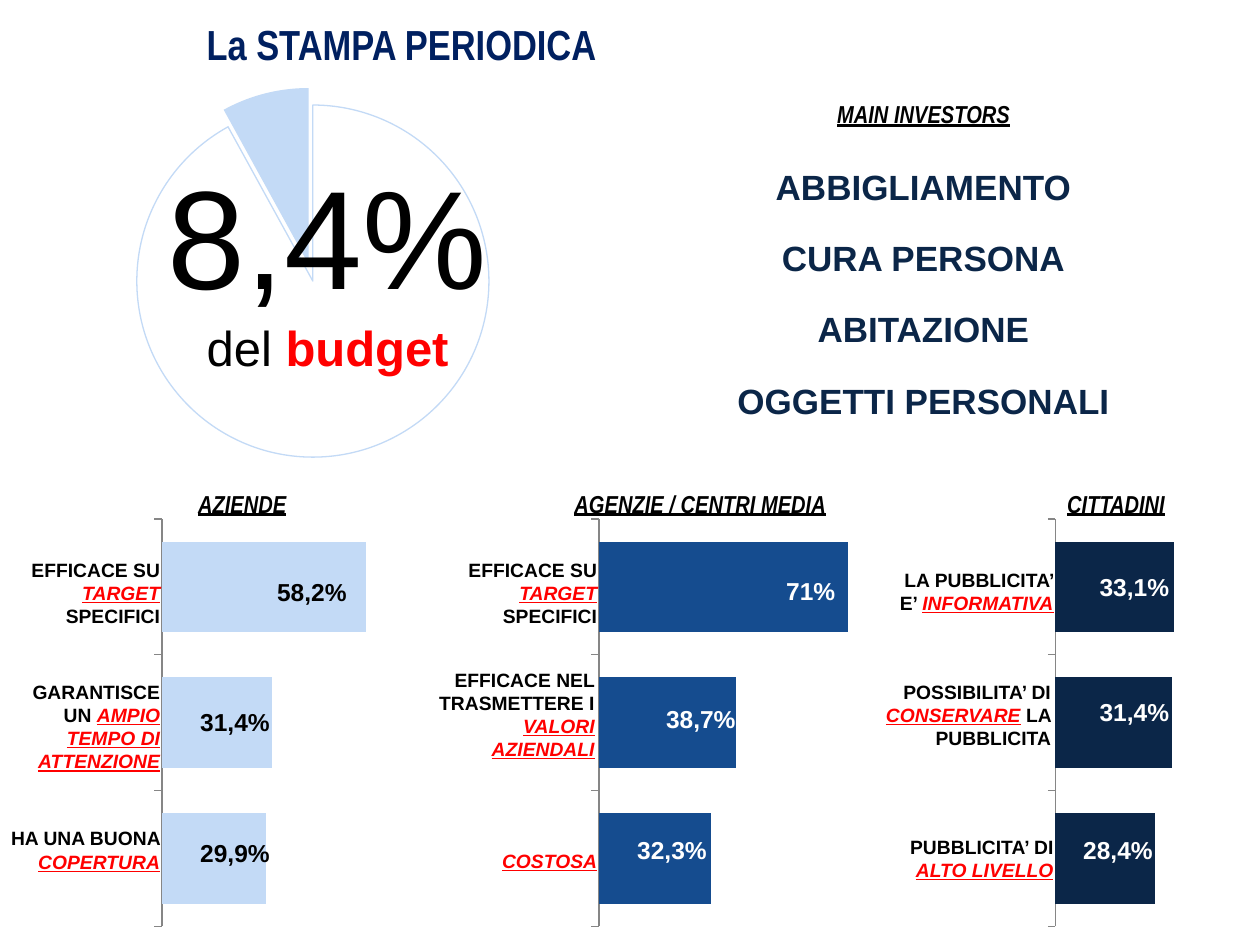
from lxml import etree
from pptx import Presentation
from pptx import util as u
from pptx.chart.data import CategoryChartData
from pptx.dml.color import RGBColor
from pptx.enum import chart as ch, text
from pptx.oxml import ns

BLACK = RGBColor(0x00, 0x00, 0x00)
WHITE = RGBColor(0xFF, 0xFF, 0xFF)
RED = RGBColor(0xFF, 0x00, 0x00)
GREY = RGBColor(0x86, 0x86, 0x86)
TITLE_BLUE = RGBColor(0x00, 0x20, 0x60)
PALE = RGBColor(0xC3, 0xDA, 0xF6)
BLUE = RGBColor(0x15, 0x4C, 0x8F)
NAVY = RGBColor(0x0B, 0x26, 0x48)

LEFT, CENTER, RIGHT = (text.PP_ALIGN.LEFT, text.PP_ALIGN.CENTER,
                       text.PP_ALIGN.RIGHT)


class Board:
    sans = "Arial"
    narrow = "Arial Narrow"

    def __init__(self, slide):
        self.slide = slide

    def place(self, shape, left, top, width, height):
        shape.left, shape.top = u.Cm(left), u.Cm(top)
        shape.width, shape.height = u.Cm(width), u.Cm(height)

    def run(self, paragraph, words, size, color, bold=True, accent=False,
            face=None):
        """Add a run; an accent is italic and underlined."""
        font = paragraph.add_run().font
        paragraph.runs[-1].text = words
        font.name, font.size, font.bold = face or self.sans, u.Pt(size), bold
        font.color.rgb = color
        if accent:
            font.italic = font.underline = True

    def box(self, left, top, width, height, align):
        """Add an empty text box and return its text frame."""
        frame = self.slide.shapes.add_textbox(
            u.Cm(left), u.Cm(top), u.Cm(width), u.Cm(height)).text_frame
        frame.word_wrap = True
        frame.auto_size = text.MSO_AUTO_SIZE.SHAPE_TO_FIT_TEXT
        frame.paragraphs[0].alignment = align
        return frame

    def title(self, words, *place):
        title = self.slide.shapes.title
        self.place(title, *place)
        frame = title.text_frame
        frame.vertical_anchor = text.MSO_ANCHOR.TOP
        frame.auto_size = text.MSO_AUTO_SIZE.NONE
        frame.paragraphs[0].alignment = LEFT
        self.run(frame.paragraphs[0], words, 24, TITLE_BLUE, face=self.narrow)

    def plain_list(self, items, *place):
        body = self.slide.placeholders[1]
        self.place(body, *place)
        frame = body.text_frame
        frame.auto_size = text.MSO_AUTO_SIZE.NONE
        for i, item in enumerate(items):
            paragraph = frame.add_paragraph() if i else frame.paragraphs[0]
            props = paragraph._p.get_or_add_pPr()
            props.set("marL", "0")
            props.set("indent", "0")
            etree.SubElement(props, ns.qn("a:buNone"))
            paragraph.alignment = CENTER
            paragraph.space_before = u.Pt(16.8 if i else 0)
            self.run(paragraph, item, 20, NAVY)

    def heading(self, words, left, top, width):
        frame = self.box(left, top, width, 0.86, CENTER)
        self.run(frame.paragraphs[0], words, 14, BLACK, accent=True,
                 face=self.narrow)

    def label(self, parts, right, top, width, height):
        """Write parts that are by turns plain and accented."""
        frame = self.box(right - width, top, width, height, RIGHT)
        for i, part in enumerate(parts):
            if part:
                accent = i % 2 == 1
                self.run(frame.paragraphs[0], part, 11,
                         RED if accent else BLACK, accent=accent)

    def value(self, words, left, top, color):
        frame = self.box(left, top, 2.13, 0.86, RIGHT)
        self.run(frame.paragraphs[0], words, 14, color)

    def chart(self, kind, values, place, area):
        """Add a one-series chart whose plot fills area (x, y, w, h shares)."""
        data = CategoryChartData()
        data.categories = [str(i + 1) for i in range(len(values))]
        data.add_series("Series 1", values)
        chart = self.slide.shapes.add_chart(
            kind, *(u.Cm(n) for n in place), data).chart
        chart.has_legend = chart.has_title = False
        chart.font.name, chart.font.size = self.sans, u.Pt(18)
        plot_area = chart._chartSpace.chart.plotArea
        for old in plot_area.findall(ns.qn("c:layout")):
            plot_area.remove(old)
        layout = etree.Element(ns.qn("c:layout"))
        manual = etree.SubElement(layout, ns.qn("c:manualLayout"))
        settings = [("layoutTarget", "inner"), ("xMode", "edge"),
                    ("yMode", "edge"), *zip("xywh", area)]
        for tag, setting in settings:
            etree.SubElement(manual, ns.qn("c:" + tag)).set("val", str(setting))
        plot_area.insert(0, layout)
        return chart

    def pie(self, values, place, area):
        chart = self.chart(ch.XL_CHART_TYPE.PIE, values, place, area)
        rest, share = (chart.plots[0].series[0].points[i] for i in range(2))
        rest.format.fill.background()
        rest.format.line.color.rgb = PALE
        rest.format.line.width = u.Pt(0.75)
        share.format.fill.solid()
        share.format.fill.fore_color.rgb = PALE
        point = rest._element.find(ns.qn("c:dPt"))
        explosion = etree.Element(ns.qn("c:explosion"))
        explosion.set("val", "10")
        point.find(ns.qn("c:spPr")).addprevious(explosion)

    def bars(self, values, left, maximum, color):
        chart = self.chart(ch.XL_CHART_TYPE.BAR_CLUSTERED, values,
                           (left, 10.29, 7.39, 8.56),
                           (0.02, 0.02, 0.96, 0.96))
        plot = chart.plots[0]
        plot.gap_width, plot.vary_by_categories = 50, False
        fill = plot.series[0].format.fill
        fill.solid()
        fill.fore_color.rgb = color
        for axis in (chart.category_axis, chart.value_axis):
            axis.has_major_gridlines = False
            axis.tick_label_position = ch.XL_TICK_LABEL_POSITION.NONE
            axis.major_tick_mark = ch.XL_TICK_MARK.OUTSIDE
        chart.category_axis.reverse_order = True
        chart.category_axis.format.line.color.rgb = GREY
        chart.value_axis.minimum_scale = 0
        chart.value_axis.maximum_scale = maximum
        chart.value_axis.format.line.fill.background()


# Each group: heading (words, left, width), chart (values, left, maximum),
# bar and value colours, then rows of
# (label parts, (right, top, width, height), value, (left, top)).
GROUPS = [
    (("AZIENDE", 1.09, 7.59), ([100, 54, 51], 3.1, 172), PALE, BLACK, [
        (("EFFICACE SU ", "TARGET", " SPECIFICI"),
         (3.48, 11.13, 3.3, 1.7), "58,2%", (5.11, 11.51)),
        (("GARANTISCE UN ", "AMPIO TEMPO DI ATTENZIONE"),
         (3.48, 13.59, 3.3, 2.18), "31,4%", (3.56, 14.12)),
        (("HA UNA BUONA ", "COPERTURA"),
         (3.48, 16.54, 3.71, 1.22), "29,9%", (3.56, 16.76))]),
    (("AGENZIE / CENTRI MEDIA", 9.32, 9.6), ([100, 55, 45], 11.91, 141),
     BLUE, WHITE, [
        (("EFFICACE SU ", "TARGET", " SPECIFICI"),
         (12.29, 11.13, 3.94, 1.7), "71%", (14.96, 11.48)),
        (("EFFICACE NEL TRASMETTERE I ", "VALORI AZIENDALI"),
         (12.24, 13.34, 3.94, 2.18), "38,7%", (12.95, 14.07)),
        (("", "COSTOSA"),
         (12.29, 16.99, 3.53, 0.74), "32,3%", (12.37, 16.71))]),
    (("CITTADINI", 17.7, 9.6), ([100, 98, 84], 21.11, 295), NAVY, WHITE, [
        (("LA PUBBLICITA’ E’ ", "INFORMATIVA"),
         (21.49, 11.33, 3.94, 1.22), "33,1%", (21.69, 11.4)),
        (("POSSIBILITA’ DI ", "CONSERVARE", " LA PUBBLICITA"),
         (21.44, 13.59, 3.94, 1.7), "31,4%", (21.69, 13.92)),
        (("PUBBLICITA’ DI ", "ALTO LIVELLO"),
         (21.49, 16.71, 3.53, 1.22), "28,4%", (21.36, 16.71))]),
]


def main():
    deck = Presentation()
    deck.slide_width, deck.slide_height = u.Cm(25.4), u.Cm(19.05)
    board = Board(deck.slides.add_slide(deck.slide_layouts[1]))

    board.title("La STAMPA PERIODICA", 3.91, 0.25, 18.24, 1.27)
    board.pie([92, 8], (0.1, 1.12, 12.24, 8.41), (0.21, 0.07, 0.58, 0.86))
    budget = board.box(1.12, 2.9, 10.97, 4.88, CENTER)
    board.run(budget.paragraphs[0], "8,4%", 80, BLACK, bold=False)
    caption = budget.add_paragraph()
    caption.alignment = CENTER
    board.run(caption, "del ", 28, BLACK, bold=False)
    board.run(caption, "budget", 28, RED)

    board.heading("MAIN INVESTORS", 13.82, 1.88, 9.6)
    board.plain_list(["ABBIGLIAMENTO", "CURA PERSONA", "ABITAZIONE",
                      "OGGETTI PERSONALI"], 13.13, 3.2, 10.97, 5.5)

    for (name, left, width), bars, bar_color, value_color, rows in GROUPS:
        board.heading(name, left, 9.73, width)
        board.bars(*bars, bar_color)
        for parts, label_place, share, share_place in rows:
            board.label(parts, *label_place)
            board.value(share, *share_place, value_color)

    deck.save("out.pptx")


if __name__ == "__main__":
    main()
